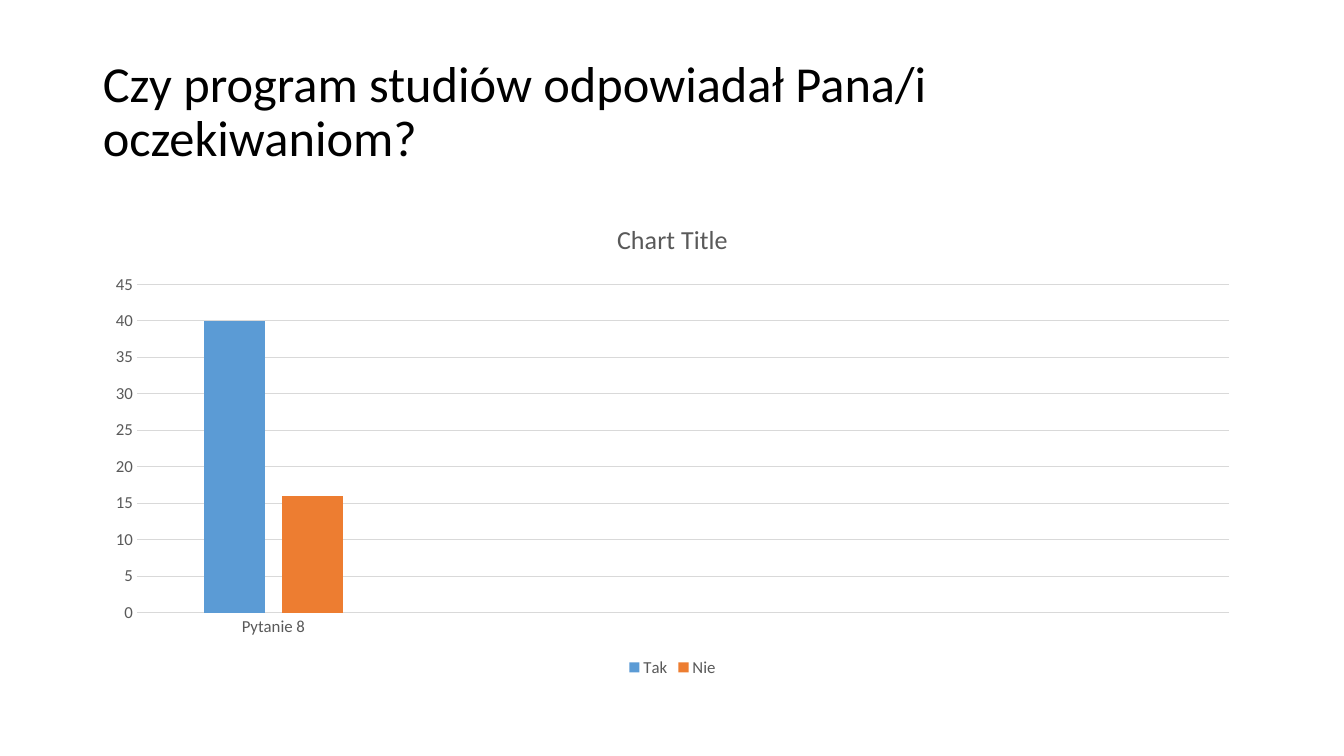
from pptx import Presentation
from pptx.chart import data
from pptx.dml import color
from pptx.enum import chart as charts, text
from pptx.util import Inches, Pt

FONT = "Calibri"
GRAY = "595959"
RULE = "D9D9D9"
ANSWERS = {"Tak": (40, "5B9BD5"), "Nie": (16, "ED7D31")}
CATEGORIES = ["Pytanie 8", "", "", ""]


def rgb(value):
    """Return the colour for a hex string."""
    return color.RGBColor.from_string(value)


def style_font(font, size, value):
    """Set typeface, size and colour of a font."""
    font.name = FONT
    font.size = Pt(size)
    font.bold = False
    font.color.rgb = rgb(value)


def style_line(line):
    """Give an axis or gridline the thin gray rule."""
    line.color.rgb = rgb(RULE)
    line.width = Pt(0.75)


def add_heading(slide, box, wording):
    """Fill the title placeholder and place it in the box."""
    title = slide.shapes.title
    title.left, title.top, title.width, title.height = map(Inches, box)
    frame = title.text_frame
    frame.text = wording
    frame.word_wrap = True
    frame.auto_size = text.MSO_AUTO_SIZE.NONE
    frame.vertical_anchor = text.MSO_ANCHOR.MIDDLE
    paragraph = frame.paragraphs[0]
    paragraph.alignment = text.PP_ALIGN.LEFT
    paragraph.line_spacing = 0.9
    style_font(paragraph.font, 36, "000000")


def style_axes(chart):
    """Format both axes and the value gridlines."""
    for axis in (chart.category_axis, chart.value_axis):
        axis.major_tick_mark = charts.XL_TICK_MARK.NONE
        axis.minor_tick_mark = charts.XL_TICK_MARK.NONE
        style_font(axis.tick_labels.font, 12, GRAY)
    style_line(chart.category_axis.format.line)
    values = chart.value_axis
    values.minimum_scale, values.maximum_scale, values.major_unit = 0, 45, 5
    values.format.line.fill.background()
    values.has_major_gridlines = True
    style_line(values.major_gridlines.format.line)


def add_answer_chart(slide, box):
    """Place the clustered columns of answers in the box."""
    chart_data = data.CategoryChartData()
    chart_data.categories = CATEGORIES
    blanks = [None] * (len(CATEGORIES) - 1)
    for name, (count, _) in ANSWERS.items():
        chart_data.add_series(name, [count] + blanks)
    chart = slide.shapes.add_chart(
        charts.XL_CHART_TYPE.COLUMN_CLUSTERED, *map(Inches, box), chart_data
    ).chart
    style_font(chart.font, 10, "000000")

    chart.has_title = True
    title_frame = chart.chart_title.text_frame
    title_frame.text = "Chart Title"
    style_font(title_frame.paragraphs[0].font, 18.6, GRAY)
    chart.chart_title.include_in_layout = False

    chart.has_legend = True
    chart.legend.position = charts.XL_LEGEND_POSITION.BOTTOM
    chart.legend.include_in_layout = False
    style_font(chart.legend.font, 12, GRAY)

    style_axes(chart)
    plot = chart.plots[0]
    plot.gap_width = 219
    plot.overlap = -27
    plot.vary_by_categories = False
    for series, (_, fill) in zip(plot.series, ANSWERS.values()):
        series.format.fill.solid()
        series.format.fill.fore_color.rgb = rgb(fill)


def main():
    """Build and save the slide."""
    presentation = Presentation()
    presentation.slide_width = Inches(13.33)
    presentation.slide_height = Inches(7.5)
    slide = presentation.slides.add_slide(presentation.slide_layouts[5])
    add_heading(slide, (0.92, 0.4, 11.5, 1.45),
                "Czy program studiów odpowiadał Pana/i oczekiwaniom?")
    add_answer_chart(slide, (0.92, 2, 11.5, 4.76))
    presentation.save("out.pptx")


if __name__ == "__main__":
    main()
